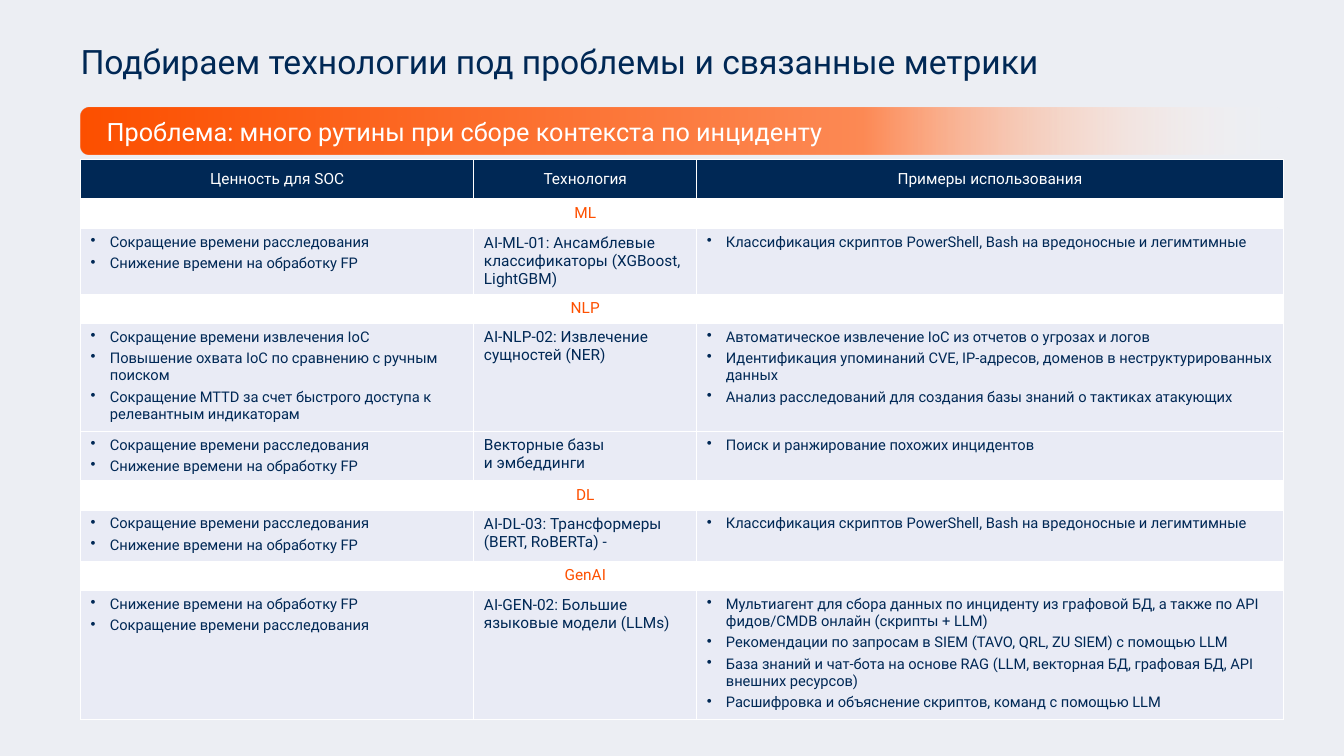
from lxml import etree
from pptx import Presentation
from pptx.dml.color import RGBColor
from pptx.enum.shapes import MSO_SHAPE
from pptx.enum.text import MSO_ANCHOR, PP_ALIGN
from pptx.oxml import parse_xml
from pptx.oxml.ns import qn
from pptx.util import Inches, Pt

ROUND = MSO_SHAPE.ROUNDED_RECTANGLE
LEFT, CENTER = PP_ALIGN.LEFT, PP_ALIGN.CENTER
TOP, MIDDLE = MSO_ANCHOR.TOP, MSO_ANCHOR.MIDDLE
NS = "http://schemas.openxmlformats.org/drawingml/2006/main"
FONT = "Roboto"
NAVY, ORANGE, PEACH, WHITE = "002855", "FE5000", "FE8A55", "FFFFFF"
PALE, BACK = "E9EBF5", "ECEEF3"

FASTER = "Сокращение времени расследования"
FEWER = "Снижение времени на обработку FP"
SCRIPTS = "Классификация скриптов PowerShell, Bash на вредоносные и легимтимные"
HEADS = ["Ценность для SOC", "Технология", "Примеры использования"]
COLS = [3.9, 2.21, 5.82]
HEAD_H, BAND_H = 0.4, 0.29
GROUPS = [
    ("ML", [
        (0.64, [FASTER, FEWER],
         ["AI-ML-01: Ансамблевые классификаторы (XGBoost, LightGBM)"],
         [SCRIPTS]),
    ]),
    ("NLP", [
        (1.07, ["Сокращение времени извлечения IoC",
                "Повышение охвата IoC по сравнению с ручным поиском",
                "Сокращение MTTD за счет быстрого доступа к релевантным индикаторам"],
         ["AI-NLP-02: Извлечение сущностей (NER)"],
         ["Автоматическое извлечение IoC из отчетов о угрозах и логов",
          "Идентификация упоминаний CVE, IP-адресов, доменов в неструктурированных данных",
          "Анализ расследований для создания базы знаний о тактиках атакующих"]),
        (0.48, [FASTER, FEWER],
         ["Векторные базы", "и эмбеддинги"],
         ["Поиск и ранжирование похожих инцидентов"]),
    ]),
    ("DL", [
        (0.51, [FASTER, FEWER],
         ["AI-DL-03: Трансформеры (BERT, RoBERTa) -"],
         [SCRIPTS]),
    ]),
    ("GenAI", [
        (1.27, [FEWER, FASTER],
         ["AI-GEN-02: Большие языковые модели (LLMs)"],
         ["Мультиагент для сбора данных по инциденту из графовой БД, "
          "а также по API фидов/CMDB онлайн (скрипты + LLM)",
          "Рекомендации по запросам в SIEM (TAVO, QRL, ZU SIEM) с помощью LLM",
          "База знаний и чат-бота на основе RAG (LLM, векторная БД, "
          "графовая БД, API внешних ресурсов)",
          "Расшифровка и объяснение скриптов, команд с помощью LLM"]),
    ]),
]


def paint(color):
    """Turn a hex string into a colour."""
    return RGBColor.from_string(color)


def write(frame, lines, size=11, color=NAVY, align=LEFT, bullet=False, spacing=None):
    """Fill a text frame with one paragraph per line."""
    frame.word_wrap = True
    for i, line in enumerate(lines):
        para = frame.add_paragraph() if i else frame.paragraphs[0]
        para.alignment = align
        if spacing:
            para.line_spacing = spacing
        if bullet:
            if i:
                para.space_before = Pt(3)
            props = para._p.get_or_add_pPr()
            props.set("marL", str(Inches(0.19)))
            props.set("indent", str(-Inches(0.19)))
            etree.SubElement(props, qn("a:buChar"), char="•")
        if line:
            run = para.add_run()
            run.text = line
            run.font.name = FONT
            run.font.size = Pt(size)
            run.font.color.rgb = paint(color)
        else:
            etree.SubElement(para._p, qn("a:endParaRPr"), sz=str(size * 100))


def label(slide, box, text, **style):
    """Place a text box with one line."""
    shape = slide.shapes.add_textbox(*map(Inches, box))
    write(shape.text_frame, [text], **style)


def banner(slide, box, text):
    """Draw the fading bar that names the problem."""
    left, top, width, height = box
    bar = slide.shapes.add_shape(ROUND, *map(Inches, box))
    bar.shadow.inherit = False
    bar.adjustments[0] = 0.18
    bar.line.fill.background()
    stops = "".join(
        f'<a:gs pos="{spot * 1000}"><a:srgbClr val="{color}">'
        f'<a:alpha val="{alpha * 1000}"/></a:srgbClr></a:gs>'
        for spot, color, alpha in [(0, ORANGE, 100), (65, PEACH, 100), (100, WHITE, 0)])
    fade = parse_xml(f'<a:gradFill xmlns:a="{NS}" rotWithShape="1"><a:gsLst>{stops}'
                     '</a:gsLst><a:lin ang="0" scaled="0"/></a:gradFill>')
    bar._element.spPr.find(qn("a:prstGeom")).addnext(fade)
    label(slide, (left + 0.16, top + 0.03, width - 1.34, height - 0.06), text,
          size=18, color=WHITE)


def dress(cell, fill, anchor=TOP, base=1):
    """Give a cell its white borders, fill and anchor."""
    props = cell._tc.get_or_add_tcPr()
    for side, width in zip("LRTB", (1, 1, 1, base)):
        props.append(parse_xml(
            f'<a:ln{side} xmlns:a="{NS}" w="{Pt(width)}"><a:solidFill>'
            f'<a:srgbClr val="{WHITE}"/></a:solidFill></a:ln{side}>'))
    cell.fill.solid()
    cell.fill.fore_color.rgb = paint(fill)
    cell.vertical_anchor = anchor


def matrix(slide, box):
    """Build the table of values, technologies and uses."""
    rows = [("head", HEAD_H, [[head] for head in HEADS])]
    for name, items in GROUPS:
        rows.append(("band", BAND_H, [[""], [name], [""]]))
        rows += [("item", height, cells) for height, *cells in items]
    grid = slide.shapes.add_table(len(rows), len(COLS), *map(Inches, box)).table
    grid.first_row = grid.horz_banding = False
    for col, width in zip(grid.columns, COLS):
        col.width = Inches(width)
    for r, (kind, height, cells) in enumerate(rows):
        grid.rows[r].height = Inches(height)
        for c, lines in enumerate(cells):
            cell = grid.cell(r, c)
            if kind == "head":
                dress(cell, NAVY, anchor=MIDDLE, base=3)
                write(cell.text_frame, lines, color=WHITE, align=CENTER)
            elif kind == "band":
                dress(cell, WHITE)
                write(cell.text_frame, lines, color=ORANGE, align=CENTER)
            else:
                dress(cell, PALE)
                listed = c != 1
                write(cell.text_frame, lines, size=10.5 if listed else 11, bullet=listed)


def main():
    """Build and save the slide."""
    deck = Presentation()
    deck.slide_width, deck.slide_height = Inches(13.33), Inches(7.5)
    slide = deck.slides.add_slide(deck.slide_layouts[6])
    slide.background.fill.solid()
    slide.background.fill.fore_color.rgb = paint(BACK)
    label(slide, (0.7, 0.4, 10.35, 0.66),
          "Подбираем технологии под проблемы и связанные метрики", size=24, spacing=0.9)
    banner(slide, (0.8, 1.07, 11.93, 0.46),
           "Проблема: много рутины при сборе контекста по инциденту")
    matrix(slide, (0.8, 1.58, 11.93, 5.53))
    deck.save("out.pptx")


if __name__ == "__main__":
    main()
